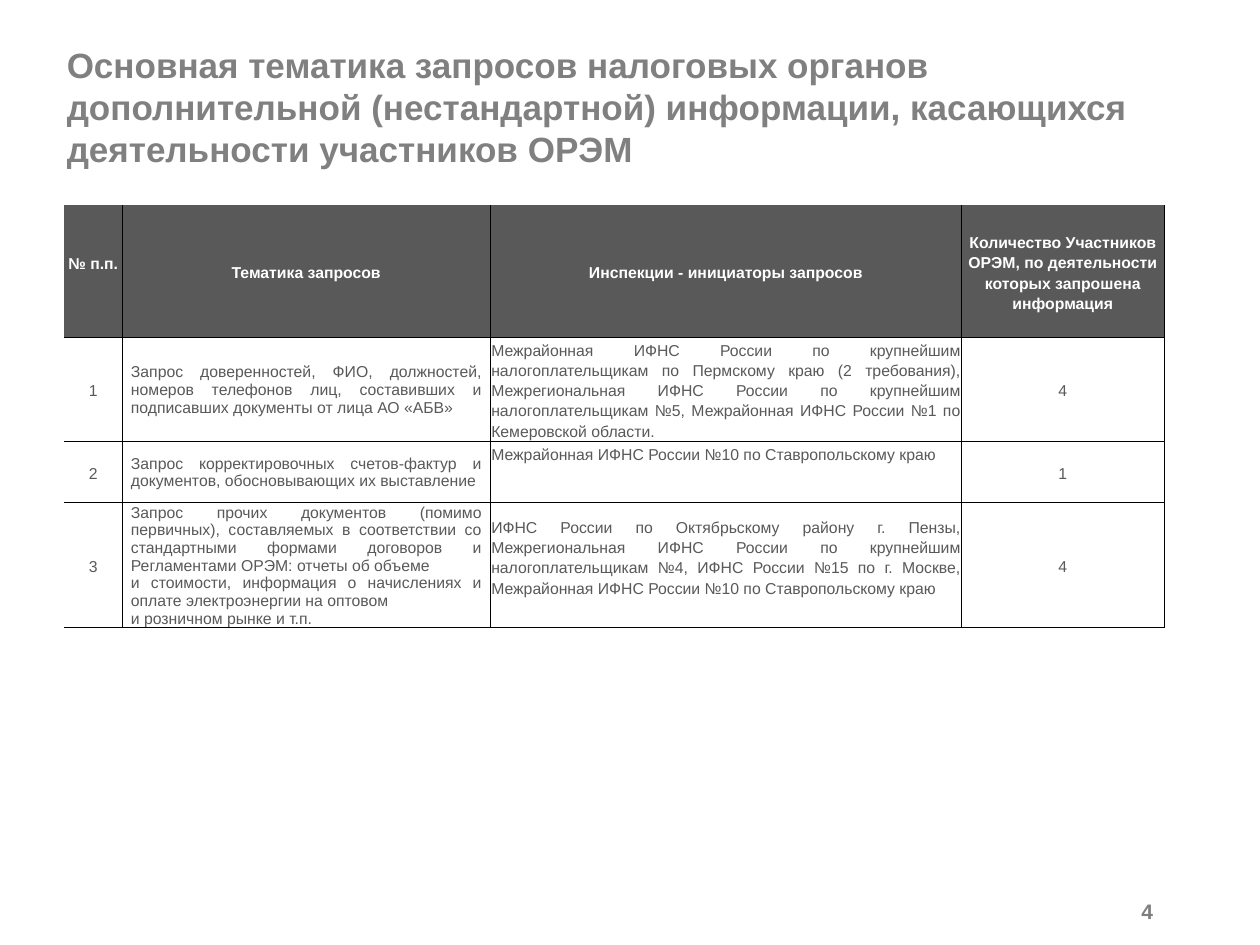
from pptx import Presentation
from pptx.dml.color import RGBColor
from pptx.enum.text import MSO_ANCHOR as ANCHOR, MSO_AUTO_SIZE as AUTO, PP_ALIGN as ALIGN
from pptx.oxml import parse_xml
from pptx.oxml.ns import nsdecls
from pptx.util import Inches, Pt

WHITE = RGBColor(0xFF, 0xFF, 0xFF)
DARK = RGBColor(0x59, 0x59, 0x59)
TITLE_GRAY = RGBColor(0x80, 0x80, 0x80)
NUMBER_GRAY = RGBColor(0x7F, 0x7F, 0x7F)
BLACK = RGBColor(0, 0, 0)

TITLE = ("Основная тематика запросов налоговых органов дополнительной (нестандартной) "
         "информации, касающихся деятельности участников ОРЭМ")
COLS = [0.46, 2.92, 3.74, 1.61]
ROWS = [1.05, 0.82, 0.49, 0.98]
HEADER = ["№ п.п.", "Тематика запросов", "Инспекции - инициаторы запросов",
          "Количество Участников ОРЭМ, по деятельности которых запрошена информация"]
REQUESTS = [
    ["1",
     "Запрос доверенностей, ФИО, должностей, номеров телефонов лиц, составивших "
     "и подписавших документы от лица АО «АБВ»",
     "Межрайонная ИФНС России по крупнейшим налогоплательщикам по Пермскому краю "
     "(2 требования), Межрегиональная ИФНС России по крупнейшим налогоплательщикам №5, "
     "Межрайонная ИФНС России №1 по Кемеровской области.",
     "4"],
    ["2",
     "Запрос корректировочных счетов-фактур и документов, обосновывающих их выставление",
     "Межрайонная ИФНС России №10 по Ставропольскому краю",
     "1"],
    ["3",
     "Запрос прочих документов (помимо первичных), составляемых в соответствии со "
     "стандартными формами договоров и Регламентами ОРЭМ: отчеты об объеме\n"
     "и стоимости, информация о начислениях и оплате электроэнергии на оптовом\n"
     "и розничном рынке и т.п.",
     "ИФНС России по Октябрьскому району г. Пензы, Межрегиональная ИФНС России по "
     "крупнейшим налогоплательщикам №4, ИФНС России №15 по г. Москве, "
     "Межрайонная ИФНС России №10 по Ставропольскому краю",
     "4"],
]


class SlideBuilder:
    font_name = "Arial"

    def __init__(self, slide):
        self.slide = slide

    def format_text(self, tf, text, size, color, bold=False, align=ALIGN.LEFT, spacing=None):
        tf.text = text
        for p in tf.paragraphs:
            p.alignment = align
            p.line_spacing = spacing
            p.font.name = self.font_name
            p.font.size = Pt(size)
            p.font.bold = bold
            p.font.color.rgb = color

    def place(self, sp, left, top, width, height):
        sp.left, sp.top = Inches(left), Inches(top)
        sp.width, sp.height = Inches(width), Inches(height)
        tf = sp.text_frame
        tf.word_wrap = True
        tf.auto_size = AUTO.NONE
        tf.vertical_anchor = ANCHOR.MIDDLE
        return tf

    def title(self, text, *box):
        tf = self.place(self.slide.shapes.title, *box)
        self.format_text(tf, text, 20, TITLE_GRAY, bold=True)

    def page_number(self, text, *box):
        tf = self.place(self.slide.shapes.add_textbox(0, 0, 0, 0), *box)
        self.format_text(tf, text, 12, NUMBER_GRAY, bold=True, align=ALIGN.RIGHT)

    def borders(self, cell, sides):
        tc_pr = cell._tc.get_or_add_tcPr()
        for side in "LRTB":
            line = f'<a:solidFill><a:srgbClr val="{BLACK}"/></a:solidFill>' if side in sides else "<a:noFill/>"
            tc_pr.append(parse_xml(f'<a:ln{side} {nsdecls("a")} w="6350">{line}</a:ln{side}>'))

    def cell(self, cell, text, fill, color, margins, sides, **style):
        self.borders(cell, sides)
        cell.fill.solid()
        cell.fill.fore_color.rgb = fill
        side, bottom = margins
        cell.margin_left = cell.margin_right = Inches(side)
        cell.margin_top, cell.margin_bottom = Inches(0.01), Inches(bottom)
        cell.vertical_anchor = ANCHOR.MIDDLE
        self.format_text(cell.text_frame, text, 9, color, **style)

    def table(self, left, top):
        data = [HEADER] + REQUESTS
        table = self.slide.shapes.add_table(
            len(ROWS), len(COLS), Inches(left), Inches(top),
            Inches(sum(COLS)), Inches(sum(ROWS))).table
        table.horz_banding = False
        for column, width in zip(table.columns, COLS):
            column.width = Inches(width)
        for row, height in zip(table.rows, ROWS):
            row.height = Inches(height)

        # Text that sits above the middle of its row gets a bottom margin
        raised = {(0, 0): 0.15, (2, 2): 0.3, (3, 2): 0.14}
        for i, row in enumerate(data):
            for j, text in enumerate(row):
                head = i == 0
                side = 0.01 if head or j == 2 else 0.07
                # The outer left and top edges stay open
                sides = "RB" + ("L" if j else "") + ("T" if i else "")
                self.cell(table.cell(i, j), text,
                          DARK if head else WHITE, WHITE if head else DARK,
                          (side, raised.get((i, j), 0)), sides, bold=head,
                          align=ALIGN.JUSTIFY if not head and j in (1, 2) else ALIGN.CENTER,
                          spacing=1.0 if j == 1 and not head else 1.15)


def main():
    prs = Presentation()
    prs.slide_width, prs.slide_height = Inches(10), Inches(7.5)
    builder = SlideBuilder(prs.slides.add_slide(prs.slide_layouts[5]))

    # Heading
    builder.title(TITLE, 0.43, 0.3, 8.82, 1.09)

    # Requests by topic
    builder.table(0.51, 1.63)

    # Page number
    builder.page_number("4", 8.15, 7.06, 1.1, 0.34)

    prs.save("out.pptx")


if __name__ == "__main__":
    main()
